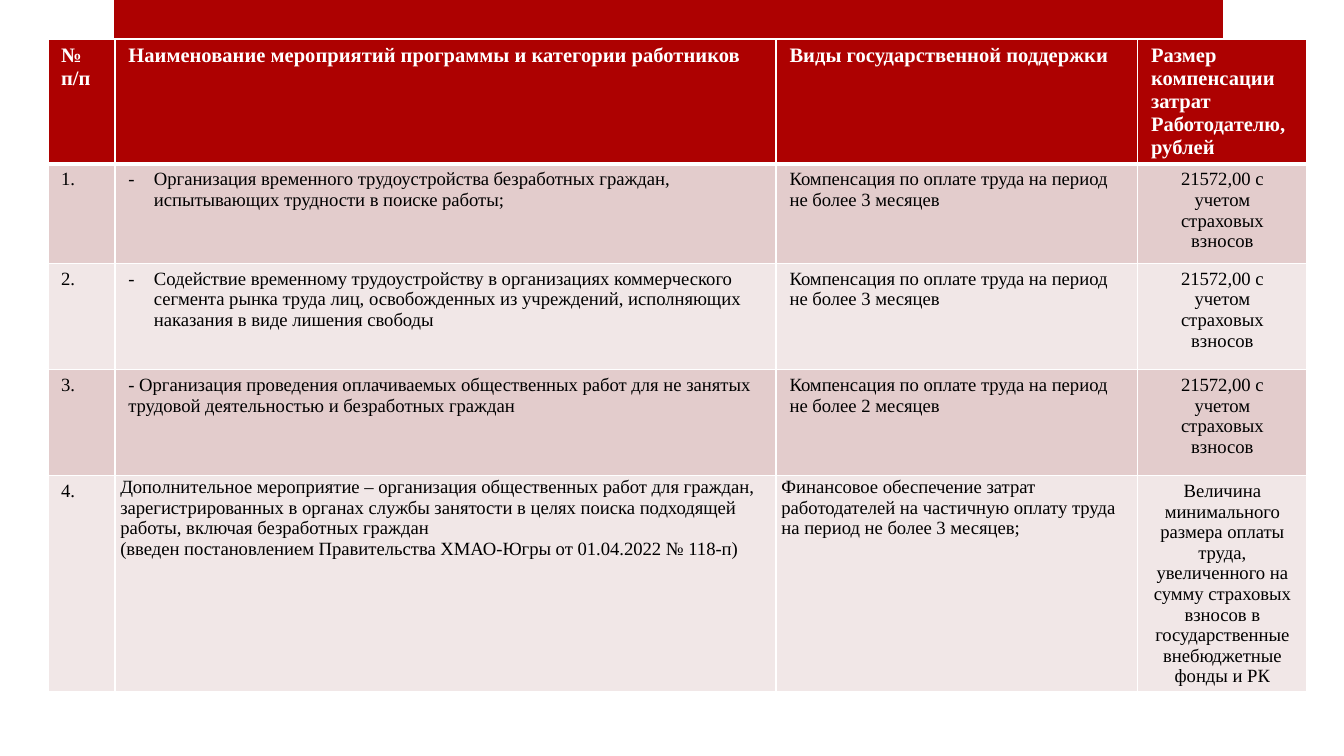
"""Build a slide with a table of state support measures for employers."""
from dataclasses import dataclass
from lxml.etree import SubElement
from pptx import Presentation
from pptx.dml.color import RGBColor
from pptx.enum.shapes import MSO_SHAPE as Preset
from pptx.enum.text import PP_ALIGN as Align
from pptx.oxml.ns import qn
from pptx.util import Inches, Pt

RED = RGBColor(0xAD, 0x01, 0x01)
ROSE = RGBColor(0xE3, 0xCC, 0xCC)
PALE = RGBColor(0xF1, 0xE7, 0xE7)
WHITE = RGBColor(0xFF, 0xFF, 0xFF)
BLACK = RGBColor(0, 0, 0)
FONT = "Times New Roman"
WIDTH = Inches(10)
HEIGHT = WIDTH * 9 // 16
COLUMN_PERCENTS = (5, 49.2, 26.9, 12.6)
ROW_PERCENTS = (12.09, 13.16, 14.04, 14.04, 24.36)
WIDE_MARGINS, TIGHT_MARGINS = (0.1, 0.04), (0.04, 0.01)
SUPPORT = "Компенсация по оплате труда на период не более {} месяцев"
AMOUNT = "21572,00 с учетом страховых взносов"
HEADERS = (
    "№ п/п",
    "Наименование мероприятий программы и категории работников",
    "Виды государственной поддержки",
    "Размер компенсации затрат Работодателю, рублей",
)


@dataclass(frozen=True)
class Measure:
    """One support measure, a row of the table."""

    name: str
    support: str
    amount: str = AMOUNT
    bullet: bool = False
    tight: bool = False


MEASURES = (
    Measure(
        "Организация временного трудоустройства безработных граждан, "
        "испытывающих трудности в поиске работы;",
        SUPPORT.format(3), bullet=True,
    ),
    Measure(
        "Содействие временному трудоустройству в организациях коммерческого "
        "сегмента рынка труда лиц, освобожденных из учреждений, исполняющих "
        "наказания в виде лишения свободы",
        SUPPORT.format(3), bullet=True,
    ),
    Measure(
        "- Организация проведения оплачиваемых общественных работ для не занятых "
        "трудовой деятельностью и безработных граждан",
        SUPPORT.format(2),
    ),
    Measure(
        "Дополнительное мероприятие – организация общественных работ для граждан, "
        "зарегистрированных в органах службы занятости в целях поиска подходящей "
        "работы, включая безработных граждан\n"
        "(введен постановлением Правительства ХМАО-Югры от 01.04.2022 № 118-п)",
        "Финансовое обеспечение затрат работодателей на частичную оплату труда "
        "на период не более 3 месяцев;",
        "Величина минимального размера оплаты труда, увеличенного на сумму "
        "страховых взносов в государственные внебюджетные фонды и РК",
        tight=True,
    ),
)


def across(percent: float) -> int:
    """Return a share of the slide width."""
    return round(WIDTH * percent / 100)


def down(percent: float) -> int:
    """Return a share of the slide height."""
    return round(HEIGHT * percent / 100)


def add_bullet(paragraph) -> None:
    """Give a paragraph a hanging dash."""
    properties = paragraph._p.get_or_add_pPr()
    indent = Inches(0.19)
    properties.set("marL", str(indent))
    properties.set("indent", str(-indent))
    SubElement(properties, qn("a:buFont")).set("typeface", FONT)
    SubElement(properties, qn("a:buChar")).set("char", "-")


def write_text(frame, text: str, *, size: float = 10, color: RGBColor = BLACK,
               bold: bool = False, align: Align = Align.LEFT, bullet: bool = False) -> None:
    """Write each line of the text as a formatted paragraph."""
    for index, line in enumerate(text.split("\n")):
        paragraph = frame.add_paragraph() if index else frame.paragraphs[0]
        if bullet:
            add_bullet(paragraph)
        paragraph.alignment = align
        run = paragraph.add_run()
        run.text = line
        font = run.font
        font.name, font.size, font.bold = FONT, Pt(size), bold
        font.color.rgb = color


def set_borders(cell, top: float, bottom: float) -> None:
    """Draw white borders around a cell."""
    properties = cell._tc.get_or_add_tcPr()
    for side, width in (("L", 1), ("R", 1), ("T", top), ("B", bottom)):
        line = SubElement(properties, qn(f"a:ln{side}"))
        line.set("w", str(Pt(width)))
        fill = SubElement(line, qn("a:solidFill"))
        SubElement(fill, qn("a:srgbClr")).set("val", str(WHITE))


def style_cell(cell, row: int, fill: RGBColor, margins: tuple[float, float] = WIDE_MARGINS) -> None:
    """Set the borders, fill and margins of a cell."""
    set_borders(cell, top=3 if row == 1 else 1, bottom=3 if row == 0 else 1)
    cell.fill.solid()
    cell.fill.fore_color.rgb = fill
    side, edge = map(Inches, margins)
    cell.margin_left = cell.margin_right = side
    cell.margin_top = cell.margin_bottom = edge


def add_top_bar(slide) -> None:
    """Draw the red bar at the top edge."""
    bar = slide.shapes.add_shape(
        Preset.RECTANGLE, across(8.5), 0, across(82.5), down(5.5))
    bar.shadow.inherit = False
    bar.fill.solid()
    bar.fill.fore_color.rgb = RED
    bar.line.fill.background()


def add_measures_table(slide) -> None:
    """Add the table of measures."""
    table = slide.shapes.add_table(
        len(ROW_PERCENTS), len(COLUMN_PERCENTS), across(3.55), down(5.15),
        across(sum(COLUMN_PERCENTS)), down(sum(ROW_PERCENTS))).table
    for column, percent in zip(table.columns, COLUMN_PERCENTS):
        column.width = across(percent)
    for row, percent in zip(table.rows, ROW_PERCENTS):
        row.height = down(percent)
    for column, header in enumerate(HEADERS):
        cell = table.cell(0, column)
        style_cell(cell, 0, RED)
        write_text(cell.text_frame, header, size=11, color=WHITE, bold=True)
    for row, measure in enumerate(MEASURES, start=1):
        texts = (f"{row}.", measure.name, measure.support, measure.amount)
        for column, text in enumerate(texts):
            cell = table.cell(row, column)
            tight = measure.tight and column in (1, 2)
            style_cell(cell, row, ROSE if row % 2 else PALE,
                       TIGHT_MARGINS if tight else WIDE_MARGINS)
            write_text(cell.text_frame, text,
                       align=Align.CENTER if column == 3 else Align.LEFT,
                       bullet=measure.bullet and column == 1)


def main() -> None:
    """Build and save the presentation."""
    presentation = Presentation()
    presentation.slide_width, presentation.slide_height = WIDTH, HEIGHT
    slide = presentation.slides.add_slide(presentation.slide_layouts[6])
    add_top_bar(slide)
    add_measures_table(slide)
    presentation.save("out.pptx")


if __name__ == "__main__":
    main()
